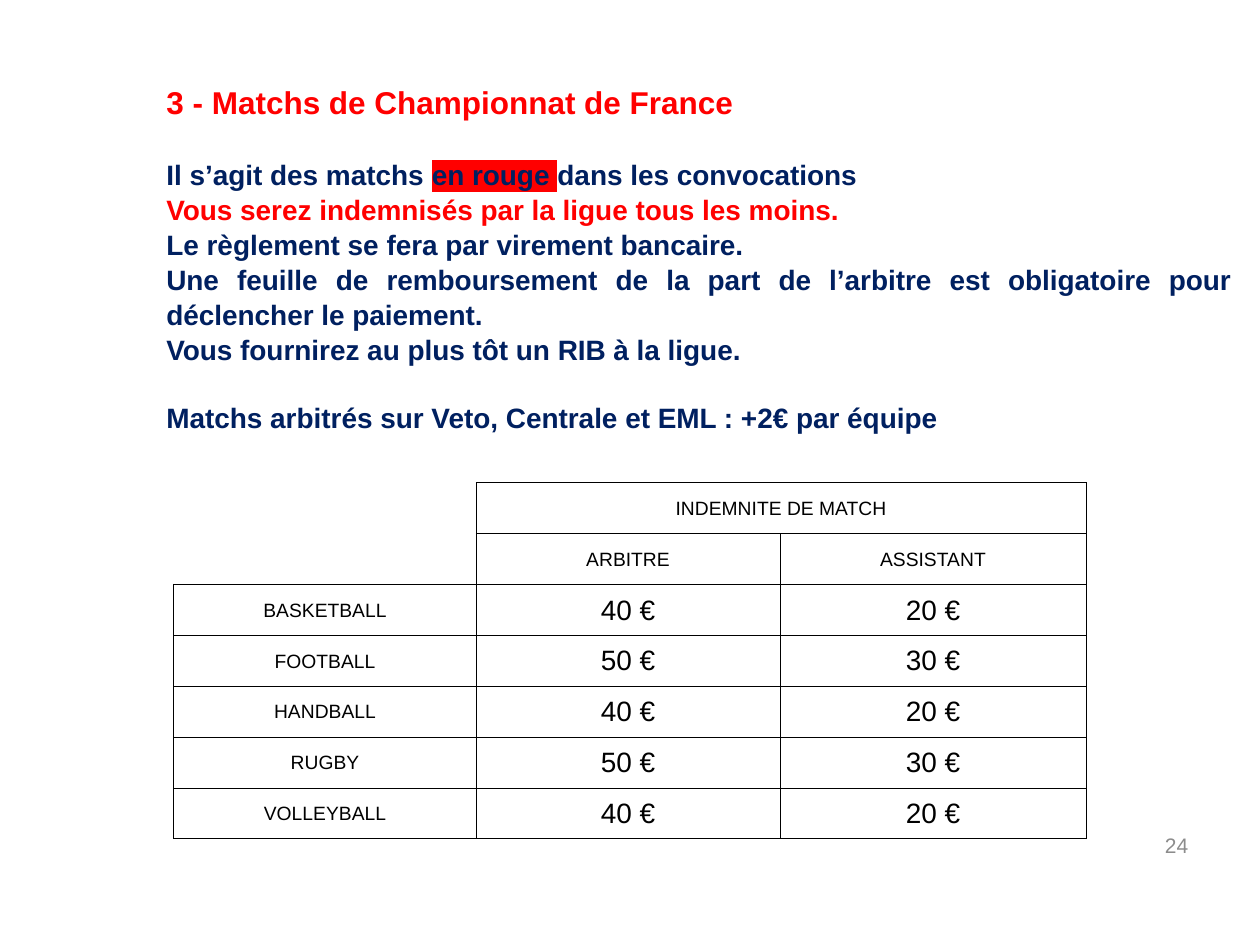
"""Build the slide on the fees for French championship matches."""
from lxml import etree
from pptx import Presentation
from pptx.dml.color import RGBColor
from pptx.enum.text import MSO_ANCHOR, MSO_AUTO_SIZE, PP_ALIGN
from pptx.oxml.ns import qn
from pptx.util import Inches, Pt

LEFT, RIGHT, CENTER, JUSTIFY = PP_ALIGN.LEFT, PP_ALIGN.RIGHT, PP_ALIGN.CENTER, PP_ALIGN.JUSTIFY
TOP, MIDDLE = MSO_ANCHOR.TOP, MSO_ANCHOR.MIDDLE
NO_AUTOFIT = MSO_AUTO_SIZE.NONE
RED, NAVY, BLACK, GREY = "FF0000", "002060", "000000", "8C8C8C"

TITLE = "3 - Matchs de Championnat de France"
BODY = [  # alignment, space before, runs of (text, colour, highlight)
    (LEFT, 0, [("Il s’agit des matchs ", NAVY, None), ("en rouge ", NAVY, RED),
               ("dans les convocations", NAVY, None)]),
    (JUSTIFY, 0, [("Vous serez indemnisés par la ligue tous les moins.", RED, None)]),
    (JUSTIFY, 0, [("Le règlement se fera par virement bancaire.", NAVY, None)]),
    (JUSTIFY, 0, [("Une feuille de remboursement de la part de l’arbitre est obligatoire "
                   "pour déclencher le paiement.", NAVY, None)]),
    (JUSTIFY, 0, [("Vous fournirez au plus tôt un RIB à la ligue.", NAVY, None)]),
    (JUSTIFY, 19, [("Matchs arbitrés sur Veto, Centrale et EML : +2€ par équipe", NAVY, None)]),
]
FEES = [
    ("", "INDEMNITE DE MATCH", ""),
    ("", "ARBITRE", "ASSISTANT"),
    ("BASKETBALL", "40 €", "20 €"),
    ("FOOTBALL", "50 €", "30 €"),
    ("HANDBALL", "40 €", "20 €"),
    ("RUGBY", "50 €", "30 €"),
    ("VOLLEYBALL", "40 €", "20 €"),
]
HEAD_ROWS = 2
COL_WIDTHS = (2.4, 2.41, 2.43)
ROW_HEIGHT = 2.83 / len(FEES)


def rgb(color):
    return RGBColor.from_string(color)


def style(r, size, color, bold=False, highlight=None):
    r.font.size, r.font.bold = Pt(size), bold
    r.font.color.rgb = rgb(color)
    if highlight:
        mark = etree.Element(qn("a:highlight"))
        etree.SubElement(mark, qn("a:srgbClr"), val=highlight)
        r.font.fill._xPr.find(qn("a:solidFill")).addnext(mark)
    r.font.name = "Arial"


def place(sp, left, top, width, height, anchor):
    sp.left, sp.top, sp.width, sp.height = map(Inches, (left, top, width, height))
    tf = sp.text_frame
    tf.word_wrap, tf.auto_size, tf.vertical_anchor = True, NO_AUTOFIT, anchor
    return tf


def fill_line(tf, text, align, size, color, bold=False):
    tf.text = text
    p = tf.paragraphs[0]
    p.alignment = align
    for r in p.runs:
        style(r, size, color, bold)


def border(cell, sides):
    tcPr = cell._tc.get_or_add_tcPr()
    for side in "LRTB":
        ln = etree.SubElement(tcPr, qn(f"a:ln{side}"), w=str(Pt(0.5)))
        if side in sides:
            fill = etree.SubElement(ln, qn("a:solidFill"))
            etree.SubElement(fill, qn("a:srgbClr"), val=BLACK)
        else:
            etree.SubElement(ln, qn("a:noFill"))


def add_body(tf):
    for i, (align, before, runs) in enumerate(BODY):
        p = tf.add_paragraph() if i else tf.paragraphs[0]
        pPr = p._p.get_or_add_pPr()
        pPr.set("marL", "0")
        pPr.set("indent", "0")
        etree.SubElement(pPr, qn("a:buNone"))
        p.alignment, p.space_before, p.line_spacing = align, Pt(before), 1.04
        for text, color, highlight in runs:
            r = p.add_run()
            r.text = text
            style(r, 16, color, True, highlight)


def add_fees(s):
    table = s.shapes.add_table(len(FEES), len(COL_WIDTHS), Inches(1.38), Inches(3.83),
                               Inches(sum(COL_WIDTHS)), Inches(2.83)).table
    table.first_row = table.horz_banding = False
    for col, width in zip(table.columns, COL_WIDTHS):
        col.width = Inches(width)
    for i, row in enumerate(FEES):
        table.rows[i].height = Inches(ROW_HEIGHT)
        for j, text in enumerate(row):
            cell = table.cell(i, j)
            corner = j == 0 and i < HEAD_ROWS
            border(cell, ("R", "RB")[i] if corner else "LRTB")
            cell.fill.background()
            cell.vertical_anchor = MIDDLE
            cell.margin_left = cell.margin_right = cell.margin_top = Inches(0.01)
            cell.margin_bottom = 0
            size = 16 if j and i >= HEAD_ROWS else 11
            fill_line(cell.text_frame, text, CENTER, size, BLACK)
    table.cell(0, 1).merge(table.cell(0, 2))


def main():
    prs = Presentation()
    prs.slide_width, prs.slide_height = Inches(10), Inches(7.5)
    s = prs.slides.add_slide(prs.slide_layouts[1])
    title, body = s.placeholders
    fill_line(place(title, 1.22, 0.61, 8.66, 0.5, TOP), TITLE, LEFT, 18, RED, True)
    add_body(place(body, 1.22, 1.19, 8.66, 2.54, TOP))
    add_fees(s)
    number = s.shapes.add_textbox(0, 0, 0, 0)
    fill_line(place(number, 7.2, 6.51, 2.33, 0.4, MIDDLE), "24", RIGHT, 12, GREY)
    prs.save("out.pptx")


if __name__ == "__main__":
    main()
